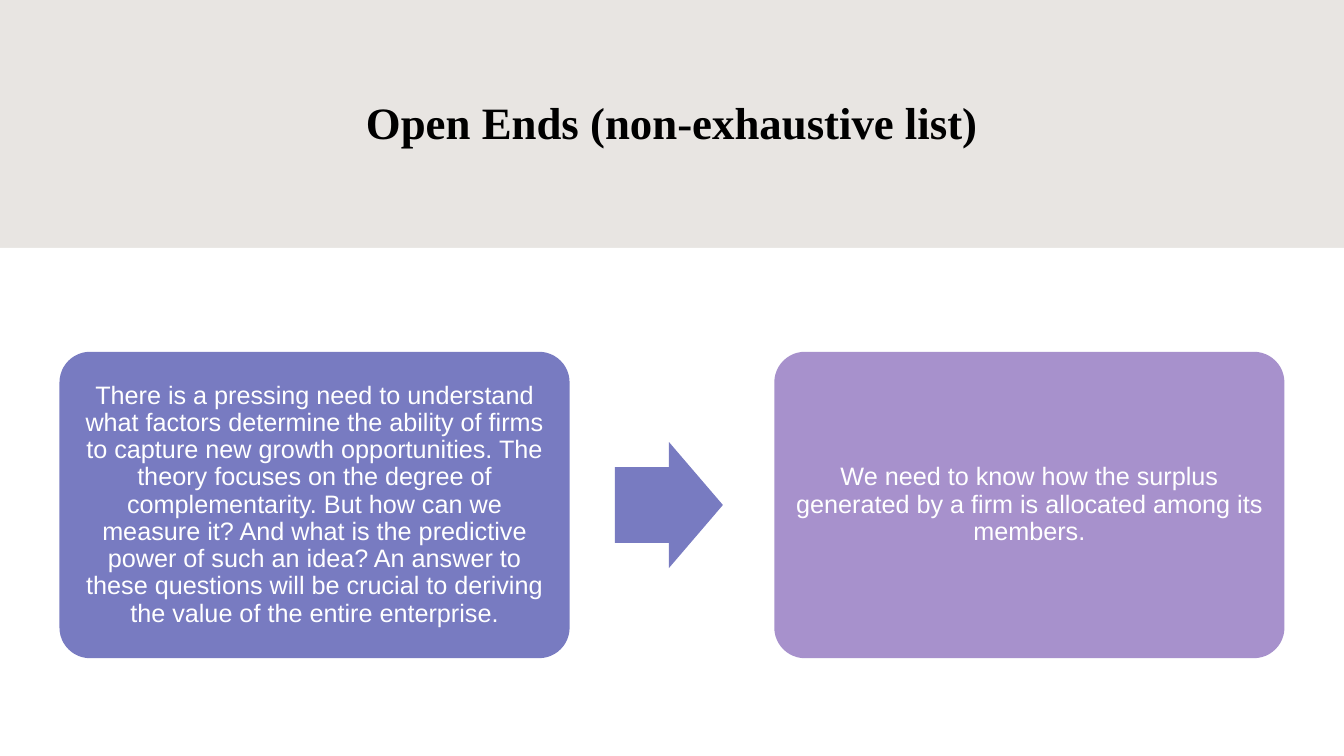
from pptx import Presentation
from pptx.dml.color import RGBColor
from pptx.enum.shapes import MSO_SHAPE
from pptx.enum.text import MSO_ANCHOR, PP_ALIGN
from pptx.util import Inches, Pt

RECT = MSO_SHAPE.RECTANGLE
ROUNDED = MSO_SHAPE.ROUNDED_RECTANGLE
ARROW = MSO_SHAPE.RIGHT_ARROW
MIDDLE = MSO_ANCHOR.MIDDLE
CENTER = PP_ALIGN.CENTER

BEIGE = RGBColor(0xE8, 0xE5, 0xE2)
WHITE = RGBColor(0xFF, 0xFF, 0xFF)
BLACK = RGBColor(0x00, 0x00, 0x00)
BLUE = RGBColor(0x78, 0x7B, 0xC1)
PURPLE = RGBColor(0xA7, 0x91, 0xCC)

SLIDE_W, SLIDE_H = 13.33, 7.5
BAND_H = 2.46
CARD_LEFT, CARD_TOP, CARD_W, CARD_H = 0.59, 3.49, 5.06, 3.04
CARD_STEP = 7.09
ARROW_LEFT, ARROW_W, ARROW_H = 6.1, 1.07, 1.25

CARDS = [
    ("There is a pressing need to understand what factors determine the "
     "ability of firms to capture new growth opportunities. The theory "
     "focuses on the degree of complementarity. But how can we measure it? "
     "And what is the predictive power of such an idea? An answer to these "
     "questions will be crucial to deriving the value of the entire "
     "enterprise.", BLUE),
    ("We need to know how the surplus generated by a firm is allocated "
     "among its members.", PURPLE),
]


def write(tf, text, font="Arial", size=18, color=WHITE, bold=False,
          line_spacing=None, space_after=0):
    """Fill a text frame with one centred paragraph."""
    tf.word_wrap = True
    tf.vertical_anchor = MIDDLE
    p = tf.paragraphs[0]
    p.alignment = CENTER
    p.space_after = Pt(space_after)
    if line_spacing:
        p.line_spacing = line_spacing
    r = p.add_run()
    r.text = text
    r.font.name = font
    r.font.size = Pt(size)
    r.font.bold = bold
    r.font.color.rgb = color


class SlideBuilder:
    def __init__(self, slide, background):
        self.s = slide
        fill = slide.background.fill
        fill.solid()
        fill.fore_color.rgb = background

    def title(self, text, x, y, w, h):
        tb = self.s.shapes.add_textbox(Inches(x), Inches(y), Inches(w), Inches(h))
        write(tb.text_frame, text, font="Times New Roman", size=32,
              color=BLACK, bold=True, space_after=6)

    def shape(self, kind, x, y, w, h, color, adjustments=()):
        sp = self.s.shapes.add_shape(kind, Inches(x), Inches(y), Inches(w), Inches(h))
        sp.shadow.inherit = False
        sp.fill.solid()
        sp.fill.fore_color.rgb = color
        sp.line.fill.background()
        for i, value in enumerate(adjustments):
            sp.adjustments[i] = value
        return sp

    def card(self, text, x, y, w, h, color):
        tf = self.shape(ROUNDED, x, y, w, h, color, [0.1]).text_frame
        # A rounded rectangle already insets its text by 0.29 of the corner radius.
        tf.margin_left = tf.margin_right = Inches(0.07)
        tf.margin_top = tf.margin_bottom = Inches(0.07)
        write(tf, text, line_spacing=0.9)


def main():
    prs = Presentation()
    prs.slide_width, prs.slide_height = Inches(SLIDE_W), Inches(SLIDE_H)
    b = SlideBuilder(prs.slides.add_slide(prs.slide_layouts[6]), BEIGE)

    b.title("Open Ends (non-exhaustive list)", 1.18, 0.59, 10.97, 1.23)
    b.shape(RECT, 0, BAND_H, SLIDE_W, SLIDE_H - BAND_H, WHITE)
    for i, (text, color) in enumerate(CARDS):
        b.card(text, CARD_LEFT + i * CARD_STEP, CARD_TOP, CARD_W, CARD_H, color)
    arrow_top = CARD_TOP + (CARD_H - ARROW_H) / 2
    b.shape(ARROW, ARROW_LEFT, arrow_top, ARROW_W, ARROW_H, BLUE, [0.6, 0.5])

    prs.save("out.pptx")


if __name__ == "__main__":
    main()
